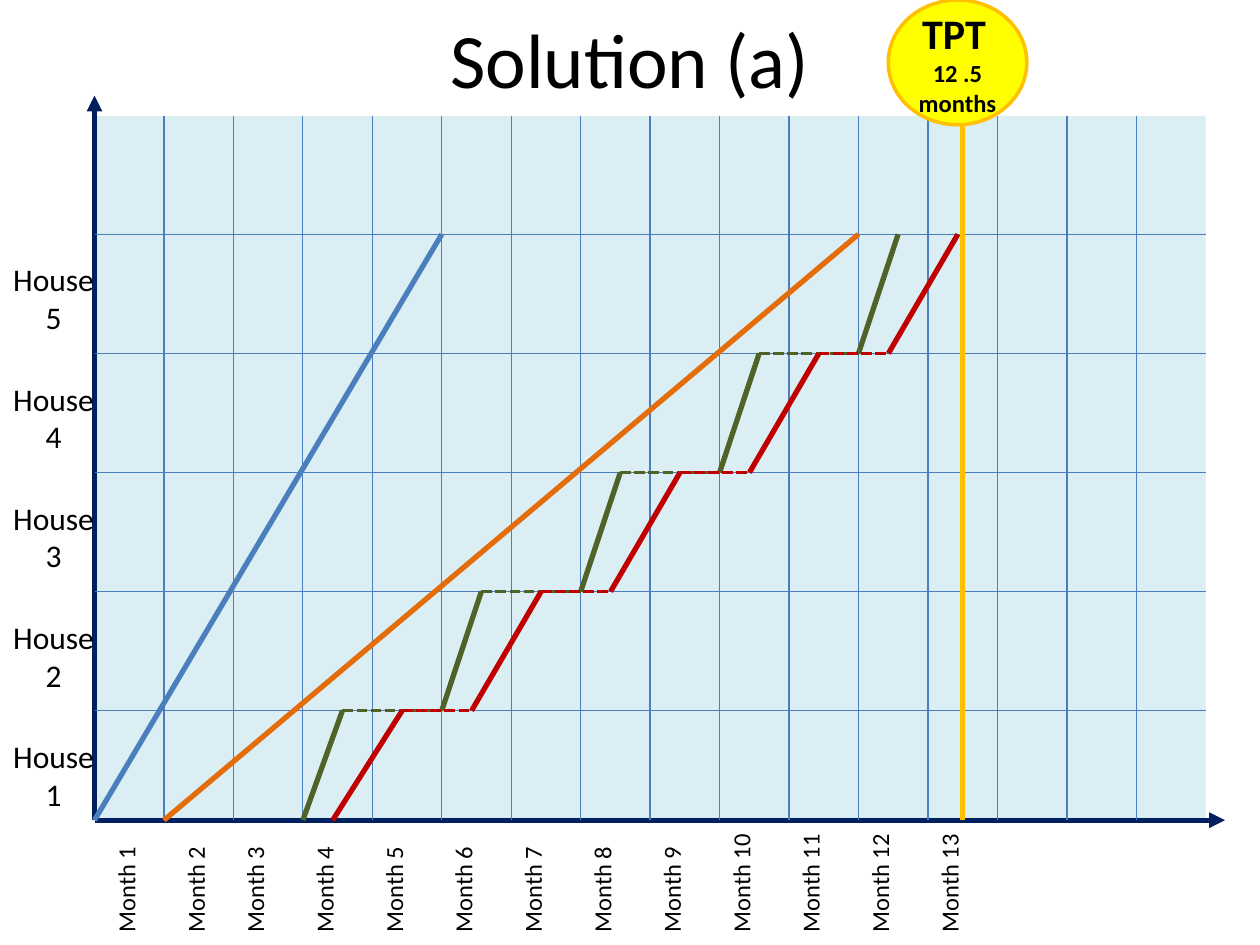
from lxml.etree import SubElement
from pptx import Presentation
from pptx.dml.color import RGBColor
from pptx.enum.dml import MSO_LINE
from pptx.enum.shapes import MSO_CONNECTOR, MSO_SHAPE
from pptx.enum.text import MSO_ANCHOR, MSO_AUTO_SIZE, PP_ALIGN
from pptx.oxml.ns import qn
from pptx.util import Pt

LEFT, RIGHT, TOP, BASE = 54, 689, 66.2, 468.7
MONTH, HOUSE, CREST = 39.69, 68.05, 133.9
NAVY, BLUE, GOLD = "002060", "4B7EBC", "FFC000"
HOUSES = 5


def paint(target, color):
    """Set a hex colour on a font, fill or line."""
    if hasattr(target, "solid"):
        target.solid()
        target.fore_color.rgb = RGBColor.from_string(color)
    else:
        target.color.rgb = RGBColor.from_string(color)


def month_x(month):
    """Return the x of the end of a month."""
    return LEFT + MONTH * month


def house_y(house):
    """Return the y of the top of a house, with the base as zero."""
    return CREST + HOUSE * (HOUSES - house) if house else BASE


def write(frame, text, size=18, bold=False, align=PP_ALIGN.CENTER):
    """Add text to the first paragraph, with newlines as line breaks."""
    para = frame.paragraphs[0]
    para.alignment = align
    for index, part in enumerate(text.split("\n")):
        if index:
            para.add_line_break()
        if part:
            run = para.add_run()
            run.text = part
            run.font.name = "Calibri"
            run.font.size = Pt(size)
            run.font.bold = bold
            paint(run.font, "000000")


def label(slide, box, text, upright=False, **style):
    """Add a text box that does not wrap, read upward if upright."""
    frame = slide.shapes.add_textbox(*map(Pt, box)).text_frame
    frame.word_wrap = False
    frame.auto_size = MSO_AUTO_SIZE.SHAPE_TO_FIT_TEXT
    if upright:
        frame._txBody.bodyPr.set("vert", "vert270")
    write(frame, text, **style)
    return frame


def shape(slide, kind, box, color, edge=None):
    """Add a filled preset shape with an optional edge."""
    item = slide.shapes.add_shape(kind, *map(Pt, box))
    item.shadow.inherit = False
    paint(item.fill, color)
    if edge:
        paint(item.line, edge)
        item.line.width = Pt(2)
    else:
        item.line.fill.background()
    return item


def line(slide, start, end, color, width=3, dash=False, arrow=False):
    """Draw a straight line, dashed or with an arrowhead on request."""
    item = slide.shapes.add_connector(
        MSO_CONNECTOR.STRAIGHT, *map(Pt, (*start, *end)))
    paint(item.line, color)
    item.line.width = Pt(width)
    if dash:
        item.line.dash_style = MSO_LINE.SQUARE_DOT
    if arrow:
        SubElement(item.line._get_or_add_ln(), qn("a:tailEnd"), type="triangle")
    SubElement(item._element.spPr, qn("a:effectLst"))


def grid(slide):
    """Draw the plot area, its axes and the month and house lines."""
    shape(slide, MSO_SHAPE.RECTANGLE,
          (LEFT, TOP, RIGHT - LEFT, BASE - TOP), "DBEEF4")
    line(slide, (LEFT, BASE), (700, BASE), NAVY, arrow=True)
    line(slide, (LEFT, BASE), (LEFT, 54.7), NAVY, arrow=True)
    for month in range(1, 16):
        x = month_x(month)
        line(slide, (x, BASE), (x, TOP), BLUE, 0.75)
    for house in range(1, HOUSES + 1):
        y = house_y(house)
        line(slide, (LEFT, y), (RIGHT, y), BLUE, 0.75)


def names(slide):
    """Label the months below the plot and the houses beside it."""
    for month in range(1, 14):
        x = month_x(month - 1) + (5.8 if month < 3 else 0)
        tall = 56.9 if month < 10 else 64.1
        label(slide, (x, 540 - tall, 31.7, tall), f"Month {month}",
              upright=True, size=14, align=PP_ALIGN.LEFT)
    for house in range(1, HOUSES + 1):
        label(slide, (0, house_y(house) + 11.4, 61.2, 51), f"House\n{house}")


def steps(slide, first, span, color):
    """Draw one work step per house, with a dashed wait between houses."""
    for house in range(HOUSES):
        start = first + 2 * house
        y = house_y(house + 1)
        line(slide, (month_x(start), house_y(house)),
             (month_x(start + span), y), color)
        if house < HOUSES - 1:
            line(slide, (month_x(start + span), y),
                 (month_x(start + 2), y), color, 2, dash=True)


def finish(slide):
    """Mark the total time with a line and a badge."""
    x = month_x(12.5)
    line(slide, (x, 0), (x, BASE), GOLD)
    badge = shape(slide, MSO_SHAPE.OVAL, (507.6, 0, 79.2, 71.3), "FFFF00", GOLD)
    frame = badge.text_frame
    frame.word_wrap = True
    frame.vertical_anchor = MSO_ANCHOR.MIDDLE
    frame.margin_left = frame.margin_right = 0
    write(frame, "TPT", size=24, bold=True)
    write(frame, " \n", size=18, bold=True)
    write(frame, "12 .5 months", size=14, bold=True)


def main():
    """Build the slide and save it."""
    deck = Presentation()
    deck.slide_width, deck.slide_height = Pt(720), Pt(540)
    slide = deck.slides.add_slide(deck.slide_layouts[6])
    title = label(slide, (36, 0, 648, 66.2), "Solution (a)", size=44)
    title.auto_size = MSO_AUTO_SIZE.NONE
    title.word_wrap = True
    title.vertical_anchor = MSO_ANCHOR.MIDDLE
    grid(slide)
    names(slide)
    line(slide, (LEFT, BASE), (month_x(5), CREST), BLUE)
    line(slide, (month_x(1), BASE), (month_x(11), CREST), "E46C0A")
    steps(slide, 3, 0.57, "4F6228")
    steps(slide, 3.43, 1, "C00000")
    finish(slide)
    deck.save("out.pptx")


if __name__ == "__main__":
    main()
